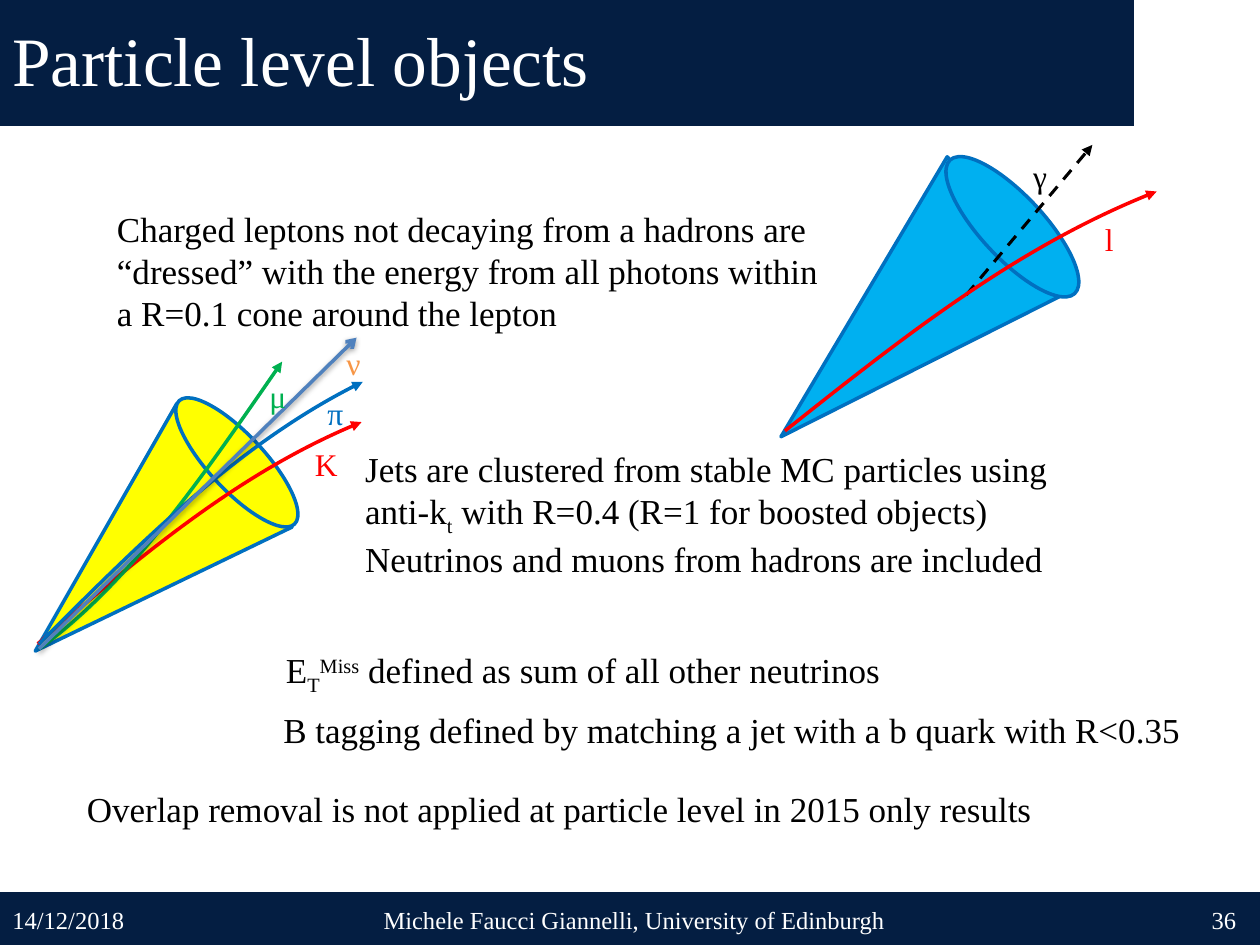
from lxml.etree import SubElement
from pptx import Presentation
from pptx.dml.color import RGBColor
from pptx.enum.dml import MSO_LINE
from pptx.enum.shapes import MSO_CONNECTOR, MSO_SHAPE
from pptx.enum.text import MSO_ANCHOR, MSO_AUTO_SIZE, PP_ALIGN
from pptx.oxml.ns import qn
from pptx.util import Inches, Pt

NAVY = RGBColor(0x04, 0x1E, 0x42)
WHITE = RGBColor(0xFF, 0xFF, 0xFF)
BLACK = RGBColor(0, 0, 0)
SKY = RGBColor(0x00, 0xB0, 0xF0)
BLUE = RGBColor(0x00, 0x70, 0xC0)
STEEL = RGBColor(0x4F, 0x81, 0xBD)
RED = RGBColor(0xFF, 0, 0)
GREEN = RGBColor(0x00, 0xB0, 0x50)
YELLOW = RGBColor(0xFF, 0xFF, 0)
ORANGE = RGBColor(0xF7, 0x96, 0x46)
FONT = "Times New Roman"
SUBSCRIPT, SUPERSCRIPT = "-25000", "30000"

BANDS = [(0, 0, 9, 1), (0, 7.08, 10, 0.42)]
BAND_TEXTS = [
    ("Particle level objects", (0, 0.08, 9, 0.78), 39.6, PP_ALIGN.LEFT),
    ("14/12/2018", (0, 7.1, 2.33, 0.4), 14, PP_ALIGN.LEFT),
    ("Michele Faucci Giannelli, University of Edinburgh", (2.87, 7.1, 4.33, 0.4), 14, PP_ALIGN.CENTER),
    ("36", (7.58, 7.1, 2.33, 0.4), 14, PP_ALIGN.RIGHT),
]
CONES = [
    {
        "fill": SKY,
        "body": (6.38, 1.38, 1.45, 2.48),
        "rim": (7.31, 1.55, 1.45, 0.5),
        "tracks": [
            {"points": [(7.67, 2.34), (8.67, 1.15)], "color": BLACK, "width": 1.75, "dash": MSO_LINE.DASH},
            {"points": [(6.23, 3.42), (7.15, 2.69), (8.08, 1.95), (9.18, 1.52)], "color": RED},
        ],
        "labels": [("γ", (8.1, 1.2, 0.31, 0.4), BLACK), ("l", (8.67, 1.7, 0.27, 0.4), RED)],
    },
    {
        "fill": YELLOW,
        "body": (0.4, 3.35, 1.34, 2.16),
        "rim": (1.21, 3.45, 1.34, 0.44),
        "tracks": [
            {"points": [(0.3, 5.11), (1.11, 4.42), (1.91, 3.74), (2.87, 3.35)], "color": RED},
            {"points": [(0.31, 5.15), (1.03, 4.63), (1.63, 3.75), (2.24, 2.87)], "color": GREEN},
            {"points": [(0.31, 5.11), (1.12, 4.3), (1.92, 3.5), (2.88, 3.03)], "color": BLUE},
            {"points": [(0.31, 5.15), (2.83, 2.68)], "color": STEEL, "arrow": "arrow", "shadow": True},
        ],
        "labels": [
            ("K", (2.4, 3.48, 0.38, 0.4), RED),
            ("π", (2.5, 3.08, 0.33, 0.4), BLUE),
            ("μ", (2.04, 2.94, 0.34, 0.4), GREEN),
            ("ν", (2.65, 2.68, 0.32, 0.4), ORANGE),
        ],
    },
]
STATEMENTS = [
    ((0.83, 1.6, 5.89, 1.11), True, [[
        ("Charged leptons not decaying from a hadrons are “dressed” with the energy "
         "from all photons within a R=0.1 cone around the lepton", None)]]),
    ((2.8, 3.5, 5.9, 1.41), True, [
        [("Jets are clustered from stable MC particles using anti-k", None),
         ("t", SUBSCRIPT), (" with R=0.4 (R=1 for boosted objects)", None)],
        [("Neutrinos and muons from hadrons are included", None)]]),
    ((2.17, 5.1, 5.08, 0.44), False, [[
        ("E", None), ("T", SUBSCRIPT), ("Miss", SUPERSCRIPT),
        (" defined as sum of all other neutrinos", None)]]),
    ((2.15, 5.57, 7.42, 0.44), True, [[
        ("B tagging defined by matching a jet with a b quark with R<0.35", None)]]),
    ((0.59, 6.2, 8.35, 0.44), True, [[
        ("Overlap removal is not applied at particle level in 2015 only results", None)]]),
]


def inches(values):
    return [Inches(value) for value in values]


def add_text(shapes, place, paragraphs, size, color, align=PP_ALIGN.LEFT, **frame_format):
    frame = shapes.add_textbox(*inches(place)).text_frame
    for name, value in frame_format.items():
        setattr(frame, name, value)
    for index, spans in enumerate(paragraphs):
        para = frame.add_paragraph() if index else frame.paragraphs[0]
        para.alignment = align
        for text, baseline in spans:
            span = para.add_run()
            span.text = text
            for name, value in {"name": FONT, "size": Pt(size)}.items():
                setattr(span.font, name, value)
            span.font.color.rgb = color
            if baseline:
                span.font._element.set("baseline", baseline)


def add_solid(shapes, kind, place, fill, outline=None, rotation=0):
    shape = shapes.add_shape(kind, *inches(place))
    shape.shadow.inherit = False
    shape.rotation = rotation
    shape.fill.solid()
    shape.fill.fore_color.rgb = fill
    if outline is None:
        shape.line.fill.background()
    else:
        shape.line.color.rgb = outline
        shape.line.width = Pt(2)


def add_curve(shapes, points):
    start, *rest = [inches(point) for point in points]
    builder = shapes.build_freeform(*start)
    builder.add_line_segments(rest, close=False)
    curve = builder.convert_to_shape()
    curve.fill.background()
    outline = next(curve._element.iter(qn("a:path")))
    bezier = SubElement(outline, qn("a:cubicBezTo"))
    for segment in outline.findall(qn("a:lnTo")):
        bezier.append(segment[0])
        outline.remove(segment)
    return curve


def add_track(shapes, points, color, width=2, dash=None, arrow="triangle", shadow=False):
    if len(points) == 2:
        start, end = map(inches, points)
        track = shapes.add_connector(MSO_CONNECTOR.STRAIGHT, *start, *end)
    else:
        track = add_curve(shapes, points)
    line = track.line
    line.color.rgb = color
    line.width = Pt(width)
    if dash:
        line.dash_style = dash
    properties = track._element.spPr
    SubElement(properties.find(qn("a:ln")), qn("a:tailEnd"), type=arrow)
    effects = SubElement(properties, qn("a:effectLst"))
    if shadow:
        outer = SubElement(effects, qn("a:outerShdw"), blurRad=str(Pt(3.1)), dist=str(Pt(1.6)),
                           dir="5400000", rotWithShape="0")
        tint = SubElement(outer, qn("a:srgbClr"), val=str(BLACK))
        SubElement(tint, qn("a:alpha"), val="38000")


def add_cone(page, cone):
    shapes = page.shapes.add_group_shape().shapes
    add_solid(shapes, MSO_SHAPE.ISOSCELES_TRIANGLE, cone["body"], cone["fill"], BLUE, 227)
    add_solid(shapes, MSO_SHAPE.OVAL, cone["rim"], cone["fill"], BLUE, 47)
    for track in cone["tracks"]:
        add_track(shapes, **track)
    for symbol, place, color in cone["labels"]:
        add_text(shapes, place, [[(symbol, None)]], 18, color,
                 word_wrap=False, auto_size=MSO_AUTO_SIZE.SHAPE_TO_FIT_TEXT)


def main():
    deck = Presentation()
    deck.slide_width, deck.slide_height = inches((10, 7.5))
    page = deck.slides.add_slide(deck.slide_layouts[6])
    for place in BANDS:
        add_solid(page.shapes, MSO_SHAPE.RECTANGLE, place, NAVY)
    for text, place, size, align in BAND_TEXTS:
        add_text(page.shapes, place, [[(text, None)]], size, WHITE, align,
                 word_wrap=True, vertical_anchor=MSO_ANCHOR.MIDDLE)
    for cone in CONES:
        add_cone(page, cone)
    for place, wrap, paragraphs in STATEMENTS:
        add_text(page.shapes, place, paragraphs, 20, BLACK,
                 word_wrap=wrap, auto_size=MSO_AUTO_SIZE.SHAPE_TO_FIT_TEXT)
    deck.save("out.pptx")


if __name__ == "__main__":
    main()
